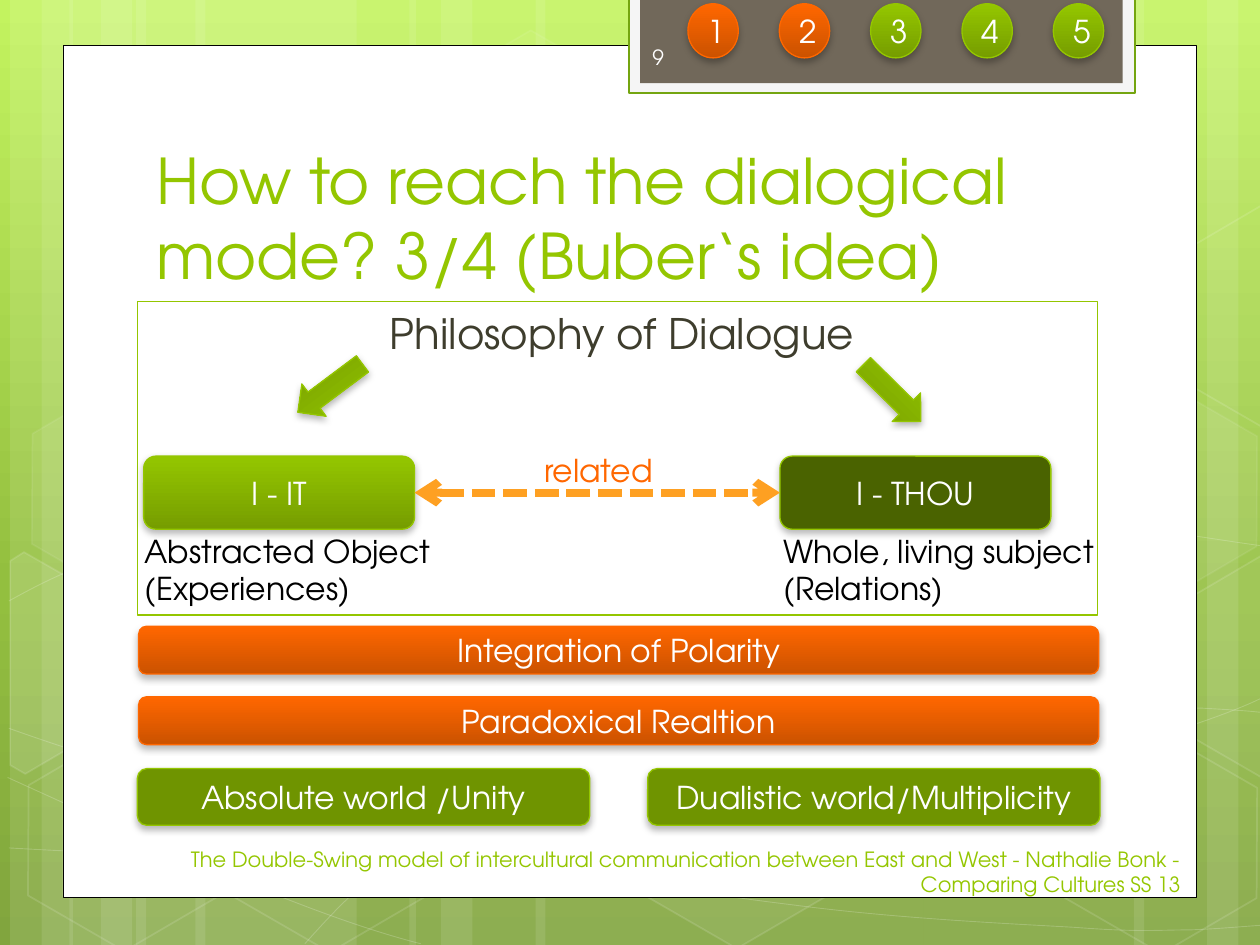
from copy import deepcopy
from dataclasses import dataclass
from math import cos, radians, sin

from lxml.etree import SubElement
from pptx import Presentation
from pptx.dml.color import RGBColor
from pptx.enum.dml import MSO_LINE
from pptx.enum.shapes import MSO_CONNECTOR, MSO_SHAPE as Shape
from pptx.enum.text import MSO_ANCHOR as Anchor, MSO_AUTO_SIZE as AutoSize, PP_ALIGN as Align
from pptx.oxml.ns import qn
from pptx.util import Inches, Pt


@dataclass(frozen=True)
class Theme:
    font: str = "TeX Gyre Adventor"
    white: str = "FFFFFF"
    black: str = "000000"
    lime: str = "94C600"
    green: str = "6F9400"
    dark_green: str = "4A6300"
    orange: str = "FF6700"
    amber: str = "FEA022"
    ink: str = "3E3D2D"
    tab: str = "71685A"
    tab_frame: str = "F5F5F5"
    tab_line: str = "74A510"
    tab_text: str = "FEFEFE"
    lime_fade: tuple = ("94C600", "769D00")
    orange_fade: tuple = ("FF6700", "CB5200")
    backdrop: tuple = ((0, "C3F35F"), (0.62, "93BF3F"), (1, "81A53E"))
    title: int = 36
    heading: int = 24
    body: int = 18
    small: int = 12


theme = Theme()


def paint(shape, fill=None, line=None, width=0.75, fill_alpha=100, line_alpha=100, shadow=False):
    """Fill is None, one colour or a (top, bottom) fade; alphas are percentages."""
    shape.shadow.inherit = False
    if fill is None:
        shape.fill.background()
    elif isinstance(fill, tuple):
        shape.fill.gradient()
        shape.fill.gradient_angle = 270
        for stop, color in zip(shape.fill.gradient_stops, fill):
            stop.color.rgb = RGBColor.from_string(color)
    else:
        shape.fill.solid()
        shape.fill.fore_color.rgb = RGBColor.from_string(fill)
    if line is None:
        shape.line.fill.background()
    else:
        shape.line.color.rgb = RGBColor.from_string(line)
        shape.line.width = Pt(width)
    properties = shape.element.spPr
    for route, alpha in (("a:solidFill/a:srgbClr", fill_alpha), ("a:ln/a:solidFill/a:srgbClr", line_alpha)):
        if alpha < 100:
            SubElement(properties.xpath(route)[0], qn("a:alpha"), val=str(alpha * 1000))
    if shadow:
        outer = SubElement(properties.find(qn("a:effectLst")), qn("a:outerShdw"), blurRad=str(Pt(4)),
                           dist=str(Pt(2)), dir="5400000", rotWithShape="0")
        tint = SubElement(outer, qn("a:srgbClr"), val=theme.black)
        SubElement(tint, qn("a:alpha"), val="28000")


def write(box, lines, color=theme.white, size=theme.body, align=Align.CENTER, anchor=Anchor.MIDDLE, wrap=True):
    frame = box.text_frame
    frame_format = {"word_wrap": wrap, "vertical_anchor": anchor,
                    "auto_size": AutoSize.NONE if wrap else AutoSize.SHAPE_TO_FIT_TEXT}
    for name, value in frame_format.items():
        setattr(frame, name, value)
    for index, line in enumerate(lines):
        para = frame.add_paragraph() if index else frame.paragraphs[0]
        para.alignment = align
        span = para.add_run()
        span.text = line
        for name, value in {"name": theme.font, "size": Pt(size)}.items():
            setattr(span.font, name, value)
        span.font.color.rgb = RGBColor.from_string(color)


deck = Presentation()
deck.slide_width, deck.slide_height = Inches(10), Inches(7.5)
page = deck.slides.add_slide(deck.slide_layouts[5])
shapes = page.shapes

# Backdrop fade with three stops
backdrop = page.background.fill
backdrop.gradient()
backdrop.gradient_angle = 270
stop_list = page.element.xpath(".//a:gsLst")[0]
stop_list.append(deepcopy(stop_list[-1]))
for stop, (position, color) in zip(backdrop.gradient_stops, theme.backdrop):
    stop.position = position
    stop.color.rgb = RGBColor.from_string(color)

# Pale vertical stripes: left, width
for left, width in [(1.08, 1.75), (0.08, 0.5), (0.33, 0.83), (1.55, 1.75), (0.55, 0.5), (0.8, 0.83),
                    (7.33, 1.75), (9.58, 0.5), (9, 0.83), (4.25, 3.08), (3.25, 0.5), (3.5, 0.83)]:
    stripe = shapes.add_shape(Shape.RECTANGLE, Inches(left), 0, Inches(width), Inches(7.5))
    paint(stripe, theme.white, fill_alpha=10)

# Fine swooping lines: a start point, then curves of two controls and an end
swoops = [
    [(0.07, 6.73), (0.61, 6.76), (1.15, 6.79), (1.9, 6.78), (2.65, 6.77), (3.58, 6.75), (4.58, 6.65),
     (5.58, 6.55), (7, 6.36), (7.92, 6.17), (8.83, 5.98), (9.77, 5.68), (10.07, 5.51)],
    [(0.07, 4.77), (0.36, 4.61), (0.65, 4.46), (1.21, 4.31), (1.78, 4.16), (2.59, 3.94), (3.47, 3.87),
     (4.36, 3.8), (5.44, 3.79), (6.54, 3.87), (7.64, 3.95), (9.47, 4.26), (10.07, 4.34)],
    [(0.06, 6.17), (1.27, 6.72), (2.47, 7.27), (3.34, 7.49)],
    [(0.07, 5.78), (0.38, 5.89), (0.7, 6), (1.28, 6.16), (1.86, 6.31), (2.73, 6.56), (3.57, 6.73),
     (4.4, 6.9), (5.45, 7.08), (6.28, 7.18), (7.11, 7.29), (8, 7.33), (8.53, 7.36),
     (9.05, 7.4), (9.19, 7.38), (9.45, 7.38), (9.71, 7.37), (9.89, 7.35), (10.07, 7.34)],
    [(2.42, 7.49), (2.6, 7.29), (2.78, 7.09), (3.02, 6.91), (3.26, 6.73), (3.6, 6.53), (3.88, 6.39),
     (4.16, 6.25), (4.33, 6.19), (4.7, 6.09), (5.06, 5.99), (5.73, 5.85), (6.08, 5.78),
     (6.44, 5.71), (6.49, 5.71), (6.8, 5.69), (7.11, 5.66), (7.6, 5.63), (7.94, 5.62),
     (8.29, 5.61), (8.86, 5.62), (8.86, 5.62), (9.53, 5.62),
     (9.71, 5.63), (9.88, 5.64), (9.97, 5.65), (10.06, 5.66), (10.03, 5.65), (10.06, 5.66)],
]
straight_end = (9.53, 5.62)
for knots in swoops:
    builder = shapes.build_freeform(*map(Inches, knots[0]))
    builder.add_line_segments([tuple(map(Inches, knot)) for knot in knots[1:]], close=False)
    swoop = builder.convert_to_shape()
    legs = swoop.element.xpath(".//a:lnTo")
    if straight_end in knots:
        del legs[knots.index(straight_end) - 1]
    for control, second, end in zip(legs[::3], legs[1::3], legs[2::3]):
        control.tag = qn("a:cubicBezTo")
        for leg in (second, end):
            control.append(leg[0])
            leg.getparent().remove(leg)
    paint(swoop, line=theme.white, width=0.5, line_alpha=20)

# Hexagons: left, top, fill alpha, line alpha
for left, top, fill_alpha, line_alpha in [
        (3.34, 0.36, 4, 8), (4.97, 5.89, 6, 12), (0.11, 5.91, 0, 12), (0.14, 3.12, 7, 8), (1.74, 5.92, 0, 12),
        (7.53, 4.53, 10, 12), (8.34, 5.93, 0, 12), (8.34, 3.14, 7, 8)]:
    hexagon = shapes.add_shape(Shape.HEXAGON, Inches(left), Inches(top), Inches(1.75), Inches(1.52))
    hexagon.adjustments[0] = 0.285
    hexagon.rotation = 30
    paint(hexagon, theme.white if fill_alpha else None, theme.white, 1, fill_alpha or 100, line_alpha)

# Hexagons cut off by the page edge: fill alpha, centre, corners as they lie after the turn
turn = radians(-30)
for fill_alpha, (mid_x, mid_y), corners in [
        (10, (0.36, 5.35), [(0.08, 4.45), (0.19, 4.38), (0.96, 4.82), (0.95, 5.7), (0.2, 6.14), (0.08, 6.07)]),
        (4, (9.85, 5.2), [(9.26, 4.85), (10.01, 4.41), (10.09, 4.46), (10.09, 6.13), (10.02, 6.17), (9.26, 5.73)]),
        (0, (9.85, 2.41), [(9.26, 2.07), (10.01, 1.63), (10.1, 1.68), (10.09, 3.35), (10.02, 3.39), (9.26, 2.95)])]:
    start, *others = [(Inches(mid_x + (x - mid_x) * cos(turn) - (y - mid_y) * sin(turn)),
                       Inches(mid_y + (x - mid_x) * sin(turn) + (y - mid_y) * cos(turn))) for x, y in corners]
    builder = shapes.build_freeform(*start)
    builder.add_line_segments(others, close=True)
    part = builder.convert_to_shape()
    part.rotation = 30
    paint(part, theme.white if fill_alpha else None, theme.white, 1, fill_alpha or 100, 12)

# White sheet and the tab at the top
for area, fill, line, width in [((0.5, 0.36, 9, 6.76), theme.white, theme.black, 0.5),
                                ((4.99, -0.02, 4.02, 0.76), theme.tab_frame, theme.tab_line, 1.25),
                                ((5.08, -0.02, 3.83, 0.68), theme.tab, None, 0)]:
    paint(shapes.add_shape(Shape.RECTANGLE, *map(Inches, area)), fill, line, width)

# Title, brought in front of the sheet
title = shapes.title
shapes.element.append(title.element)
for name, value in {"left": 1.14, "top": 1.12, "width": 7.68, "height": 1.25}.items():
    setattr(title, name, Inches(value))
write(title, ["How to reach the dialogical mode? 3/4 (Buber‘s idea)"], theme.lime, theme.title,
      Align.LEFT, Anchor.BOTTOM)

# Philosophy frame
frame_box = shapes.add_shape(Shape.RECTANGLE, *map(Inches, (1.09, 2.39, 7.62, 2.49)))
paint(frame_box, line=theme.lime)
write(frame_box, ["Philosophy of Dialogue"], theme.ink, theme.heading, anchor=Anchor.TOP)
frame_box.text_frame.margin_left = Inches(0.17)

# Block arrows down to the two modes
for left, top, angle in [(2.3, 2.92, 143.2), (6.76, 2.96, 44.7)]:
    arrow = shapes.add_shape(Shape.RIGHT_ARROW, Inches(left), Inches(top), Inches(0.64), Inches(0.32))
    arrow.rotation = angle
    paint(arrow, theme.lime_fade, theme.lime, shadow=True)

# Step markers and labelled bars
markers = [(Shape.OVAL, (5.46 + 0.725 * step, 0.03, 0.4, 0.43), str(step + 1),
            theme.orange_fade if step < 2 else theme.lime_fade, theme.orange if step < 2 else theme.lime)
           for step in range(5)]
bars = [(Shape.ROUNDED_RECTANGLE, *bar) for bar in [
    ((1.14, 3.62, 2.15, 0.58), "I - IT", theme.lime_fade, theme.lime),
    ((6.19, 3.62, 2.15, 0.58), "I - THOU", theme.dark_green, theme.lime),
    ((1.1, 4.97, 7.62, 0.38), "Integration of Polarity", theme.orange_fade, theme.orange),
    ((1.1, 5.53, 7.62, 0.38), "Paradoxical Realtion", theme.orange_fade, theme.orange),
    ((1.09, 6.1, 3.59, 0.45), "Absolute world /Unity", theme.green, theme.lime),
    ((5.14, 6.1, 3.59, 0.45), "Dualistic world/Multiplicity", theme.green, theme.lime)]]
boxes = {}
for kind, area, label, fill, line in markers + bars:
    boxes[label] = shapes.add_shape(kind, *map(Inches, area))
    paint(boxes[label], fill, line, shadow=True)
    write(boxes[label], [label])

# Dashed link between the two modes
link = shapes.add_connector(MSO_CONNECTOR.STRAIGHT, *map(Inches, (3.29, 3.91, 6.19, 3.91)))
link.begin_connect(boxes["I - IT"], 3)
link.end_connect(boxes["I - THOU"], 1)
link.line.color.rgb = RGBColor.from_string(theme.amber)
link.line.width = Pt(4.5)
link.line.dash_style = MSO_LINE.SQUARE_DOT
for end in ("a:headEnd", "a:tailEnd"):
    SubElement(link.element.spPr.find(qn("a:ln")), qn(end), type="arrow")
SubElement(link.element.spPr, qn("a:effectLst"))

# Free text: area, lines, colour, size, alignment, anchor, wrap
label_format = (theme.body, Align.LEFT, Anchor.TOP, False)
for area, *text in [
        ((4.22, 3.53, 1.09, 0.4), ["related"], theme.orange, *label_format),
        ((1.05, 4.17, 2.5, 0.71), ["Abstracted Object", "(Experiences)"], theme.black, *label_format),
        ((6.12, 4.17, 2.69, 0.71), ["Whole, living subject", "(Relations)"], theme.black, *label_format),
        ((5.08, 0.25, 1.46, 0.4), ["9"], theme.tab_text, theme.small, Align.LEFT),
        ((0.54, 6.72, 8.93, 0.4), ["The Double-Swing model of intercultural communication between East and West"
                                   " - Nathalie Bonk - Comparing Cultures SS 13"],
         theme.lime, theme.small, Align.RIGHT)]:
    write(shapes.add_textbox(*map(Inches, area)), *text)

deck.save("out.pptx")
